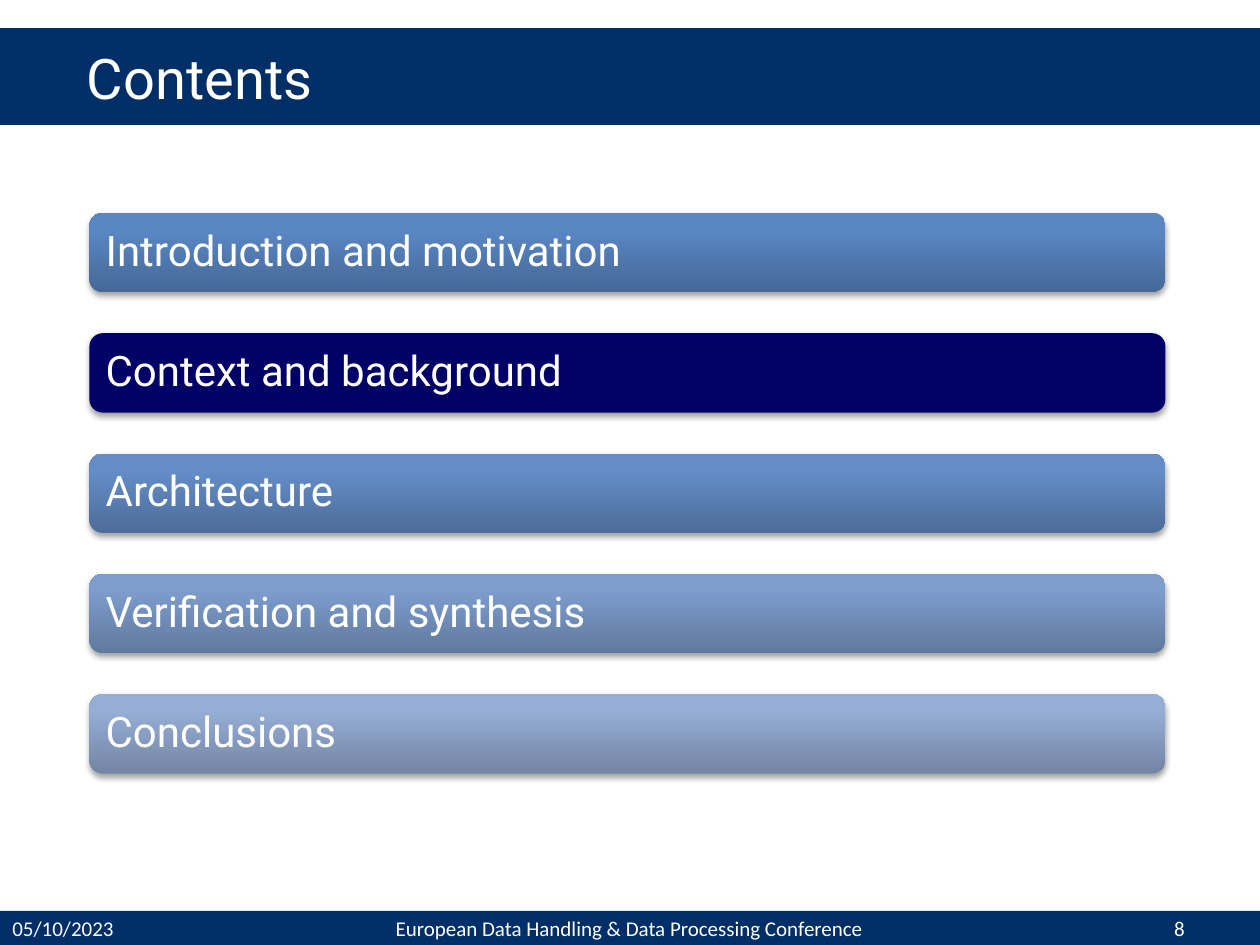
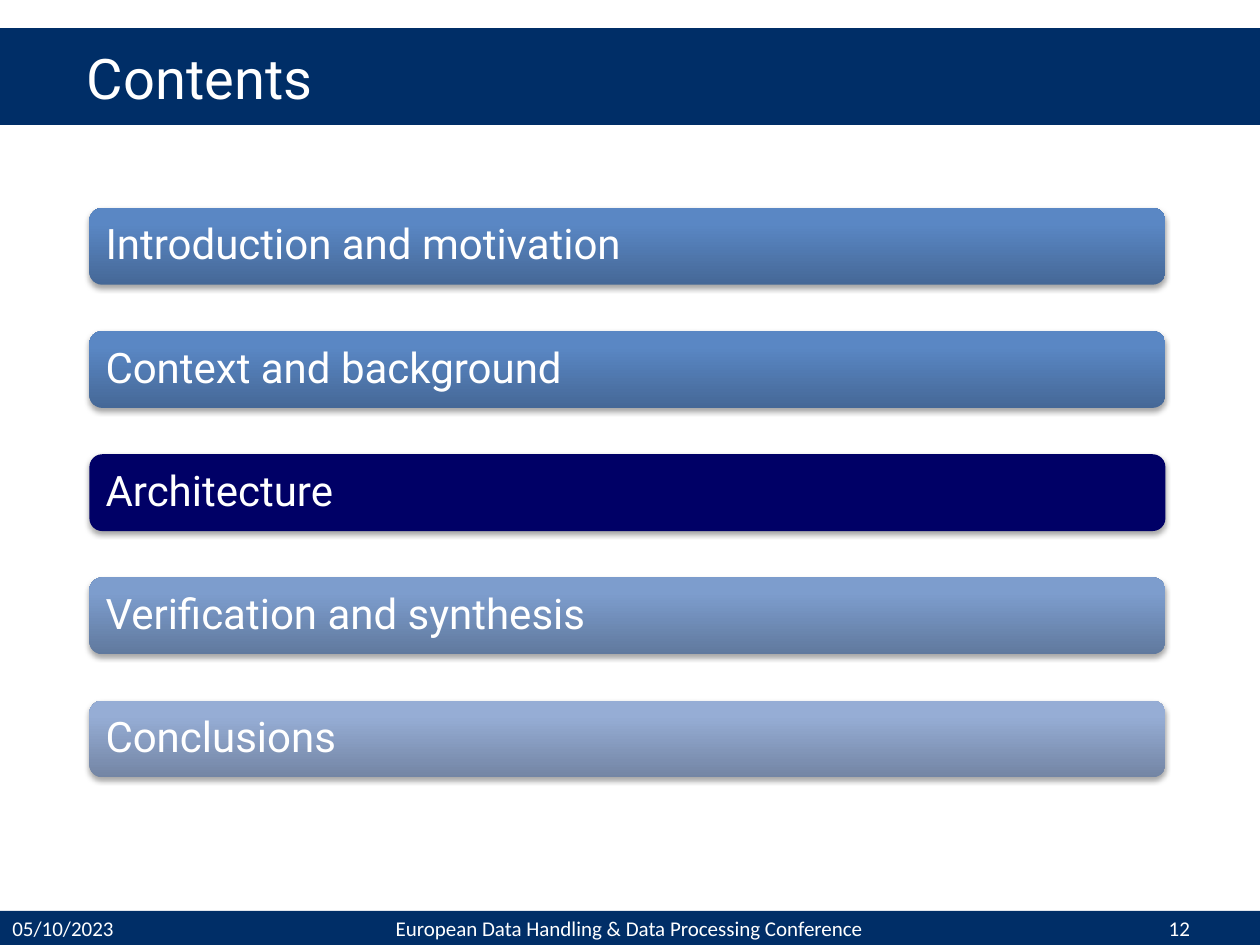
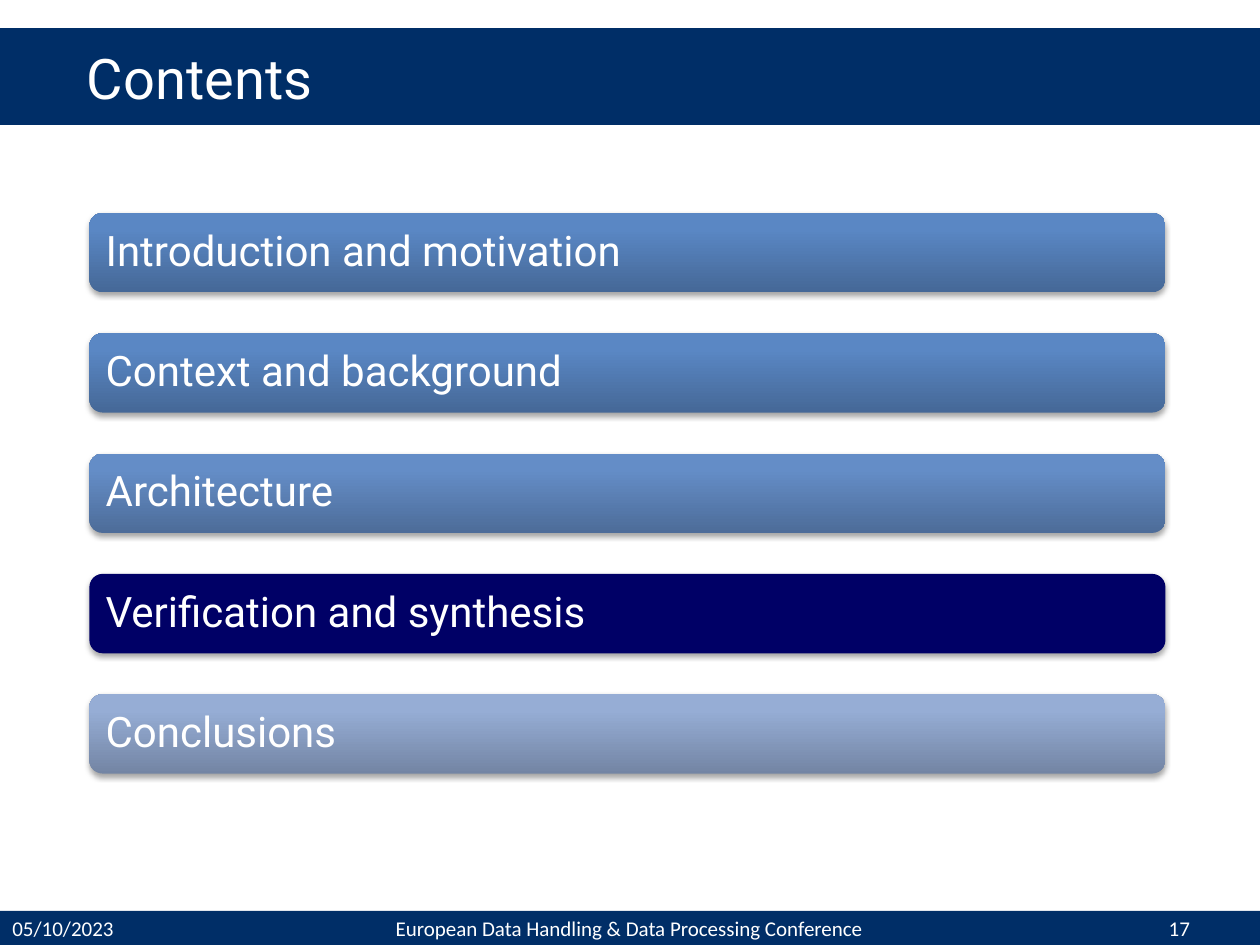
from copy import deepcopy

from pptx import Presentation
from pptx.dml.color import RGBColor
from pptx.enum import shapes, text
from pptx.oxml import ns, parse_xml
from pptx.util import Inches, Pt

NAVY = RGBColor(0x00, 0x2E, 0x67)
HIGHLIGHT = RGBColor(0x00, 0x00, 0x66)
WHITE = RGBColor(0xFF, 0xFF, 0xFF)
STRONG_BLUE = [RGBColor.from_string(code) for code in ("456897", "5A87C4", "5887C7")]
MEDIUM_BLUE = [RGBColor.from_string(code) for code in ("4D6C99", "648DC7", "638DCA")]
SOFT_BLUE = [RGBColor.from_string(code) for code in ("60799E", "7D9DCD", "7C9DD0")]
PALE_BLUE = [RGBColor.from_string(code) for code in ("7385A4", "96ADD5", "95ADD7")]
STOP_POSITIONS = (0, 0.8, 1)

HEADING_FONT = "Roboto"
FOOTER_FONT = "Calibri"
DATE = "05/10/2023"
CONFERENCE = "European Data Handling & Data Processing Conference"

SECTIONS = [
    ("Introduction and motivation", STRONG_BLUE),
    ("Context and background", STRONG_BLUE),
    ("Architecture", MEDIUM_BLUE),
    ("Verification and synthesis", SOFT_BLUE),
    ("Conclusions", PALE_BLUE),
]

WIDE_BARS = (1.69, 5.51, 0.63)
SLIM_BARS = (1.65, 5.56, 0.61)
CONTENTS_SLIDES = [
    (8, "Context and background", WIDE_BARS),
    (12, "Architecture", SLIM_BARS),
    (17, "Verification and synthesis", WIDE_BARS),
]

SHADOW = (
    f'<a:outerShdw {ns.nsdecls("a")} blurRad="{Pt(3.1)}" dist="{Pt(1.8)}" '
    'dir="5400000" rotWithShape="0"><a:srgbClr val="000000">'
    '<a:alpha val="35000"/></a:srgbClr></a:outerShdw>'
)


def write(shape, words, font, size, alignment=text.PP_ALIGN.LEFT):
    frame = shape.text_frame
    frame.text = words
    frame.word_wrap = True
    frame.vertical_anchor = text.MSO_ANCHOR.MIDDLE
    paragraph = frame.paragraphs[0]
    paragraph.alignment = alignment
    run_font = paragraph.runs[0].font
    run_font.name = font
    run_font.size = Pt(size)
    run_font.color.rgb = WHITE


def add_band(slide, top, height, line_width=None):
    band = slide.shapes.add_shape(
        shapes.MSO_SHAPE.RECTANGLE, 0, Inches(top), Inches(10), Inches(height))
    band.shadow.inherit = False
    band.fill.solid()
    band.fill.fore_color.rgb = NAVY
    if line_width:
        band.line.color.rgb = NAVY
        band.line.width = Pt(line_width)
    else:
        band.line.fill.background()
    slide.shapes.title.element.addprevious(band.element)


def set_title(slide, words):
    title = slide.shapes.title
    title.left, title.top = Inches(0.59), Inches(0.24)
    title.width, title.height = Inches(8.2), Inches(0.74)
    write(title, words, HEADING_FONT, 32)


def add_footer_text(slide, words, left, width, alignment=text.PP_ALIGN.CENTER):
    box = slide.shapes.add_textbox(
        Inches(left), Inches(7.24), Inches(width), Inches(0.26))
    write(box, words, FOOTER_FONT, 12, alignment)


def fill_gradient(shape, colors):
    shape.fill.gradient()
    shape.fill.gradient_angle = 90
    stop_list = shape.element.spPr.find(".//" + ns.qn("a:gsLst"))
    stop_list.append(deepcopy(stop_list[-1]))
    for stop, position, color in zip(shape.fill.gradient_stops, STOP_POSITIONS, colors):
        stop.position = position
        stop.color.rgb = color


def add_section_bar(slide, words, colors, top, height, current):
    bar = slide.shapes.add_shape(
        shapes.MSO_SHAPE.ROUNDED_RECTANGLE,
        Inches(0.71), Inches(top), Inches(8.54), Inches(height))
    bar.line.fill.background()
    if current:
        bar.fill.solid()
        bar.fill.fore_color.rgb = HIGHLIGHT
    else:
        fill_gradient(bar, colors)
    bar.shadow.inherit = False
    bar.element.spPr.find(ns.qn("a:effectLst")).append(parse_xml(SHADOW))
    write(bar, words, HEADING_FONT, 24)
    bar.text_frame.margin_left = Inches(0.1)
    bar.text_frame.paragraphs[0].line_spacing = 0.9


def add_contents_slide(presentation, number, current_section, bars):
    slide = presentation.slides.add_slide(presentation.slide_layouts[5])
    add_band(slide, 7.23, 0.29)
    add_band(slide, 0.24, 0.74, line_width=2)
    set_title(slide, "Contents")
    add_footer_text(slide, DATE, 0, 1.06, text.PP_ALIGN.LEFT)
    add_footer_text(slide, CONFERENCE, 2.63, 4.73)
    add_footer_text(slide, str(number), 8.75, 1.22)
    first_top, last_top, height = bars
    pitch = (last_top - first_top) / (len(SECTIONS) - 1)
    for index, (words, colors) in enumerate(SECTIONS):
        add_section_bar(slide, words, colors, first_top + index * pitch, height,
                        words == current_section)


def main():
    presentation = Presentation()
    presentation.slide_width = Inches(10)
    presentation.slide_height = Inches(7.5)
    for number, current_section, bars in CONTENTS_SLIDES:
        add_contents_slide(presentation, number, current_section, bars)
    presentation.save("out.pptx")


if __name__ == "__main__":
    main()
